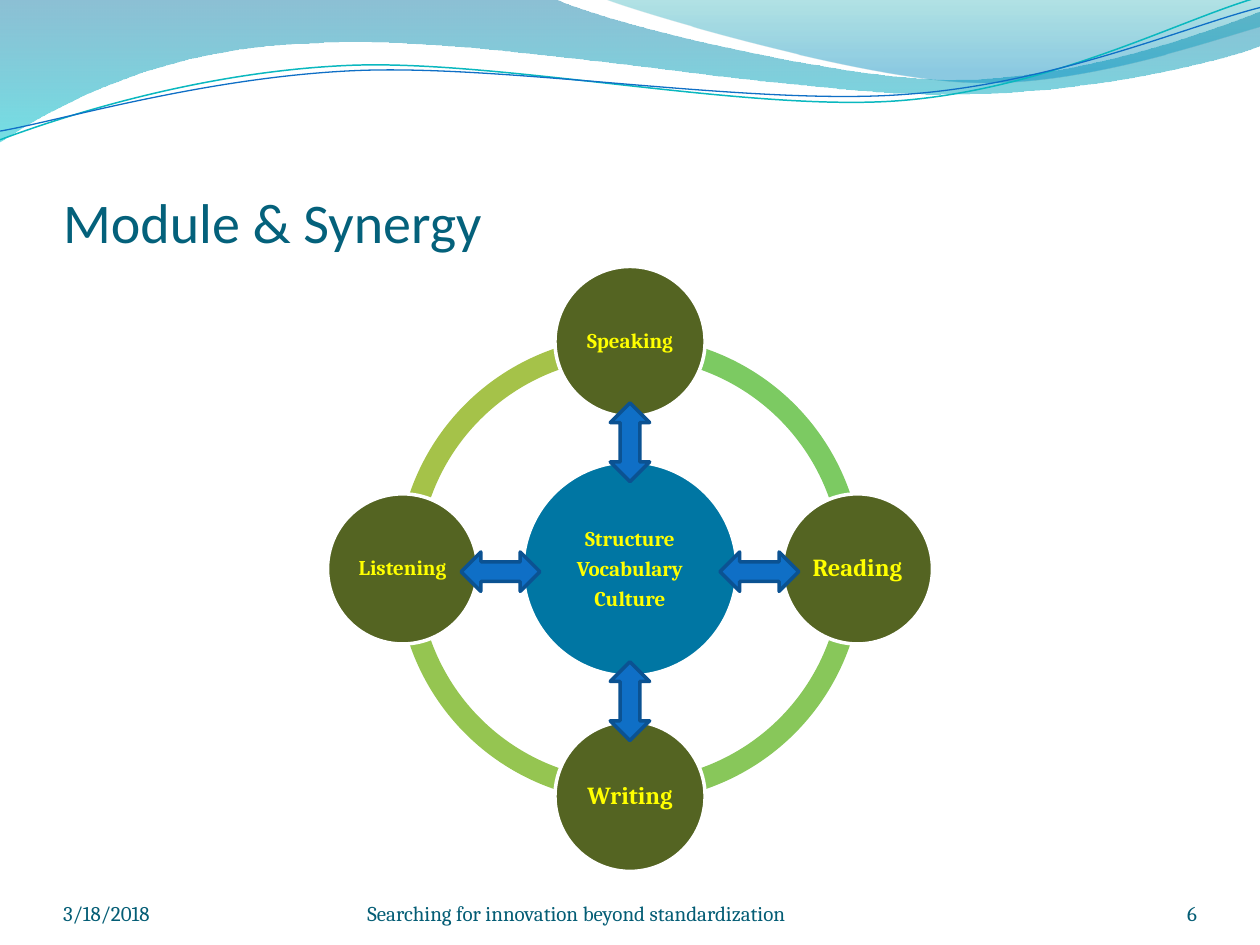
from lxml.etree import SubElement
from pptx import Presentation
from pptx.dml.color import RGBColor
from pptx.enum.shapes import MSO_SHAPE
from pptx.enum.text import MSO_ANCHOR, MSO_AUTO_SIZE, PP_ALIGN
from pptx.oxml.ns import qn
from pptx.util import Pt

WHITE = RGBColor(0xFF, 0xFF, 0xFF)
YELLOW = RGBColor(0xFF, 0xFF, 0x00)
TITLE = RGBColor(0x04, 0x61, 0x7B)
FOOT = RGBColor(0x04, 0x5D, 0x75)
CORE = RGBColor(0x00, 0x76, 0xA3)
NODE = RGBColor(0x54, 0x64, 0x22)
BLUE = RGBColor(0x0F, 0x6F, 0xC6)
NAVY = RGBColor(0x0B, 0x52, 0x92)
TEAL = RGBColor(0x0A, 0xB8, 0xBF)
ARCS = [RGBColor(0x88, 0xC7, 0x5A), RGBColor(0x95, 0xC5, 0x51),
        RGBColor(0xA5, 0xC2, 0x49), RGBColor(0x7C, 0xCA, 0x62)]
DEEP = [(0, RGBColor(0x00, 0x74, 0xA1), 45), (1, RGBColor(0x00, 0xC6, 0xCF), 55)]
PALE = [(0, RGBColor(0x00, 0xA1, 0xA9), 30), (0.8, RGBColor(0x00, 0x8B, 0xBF), 45)]

BAND = [(-0.7, 0), (316.8, -0.7),
        (342.7, 12.2, 478.1, 45.4, 545.8, 45.4),
        (614.2, 45.4, 689.8, 18.7, 720, 6.5), (720.7, 25.9),
        (707.8, 31.7, 626.4, 54.7, 537.1, 54),
        (447.8, 54, 275, 20.2, 185, 24.5),
        (92.9, 25.9, 33.1, 59.8, -0.7, 81.4)]
CREST = [(344.9, -0.7),
         (366.5, 7.9, 491, 44.6, 553.7, 46.8),
         (616.3, 49.7, 691.9, 23, 720, 15.1), (720, 0)]
UPPER = [(0, 79.9),
         (34.6, 67, 113.8, 41, 199.4, 37.4),
         (284.4, 33.8, 427, 64.1, 513.4, 57.6),
         (599.8, 51.1, 675.4, 10.8, 718.6, -1.4)]
LOWER = [(0, 74.9),
         (33.8, 69.1, 118.1, 43.9, 203.8, 40.3),
         (290.2, 36.7, 429.8, 60.5, 516.2, 54),
         (601.9, 48.2, 677.5, 15.1, 720, 4.3)]


def bend(shape, segs):
    track = next(shape._element.iter(qn("a:path")))
    marks = iter(track.findall(qn("a:lnTo")))
    for seg in segs[1:]:
        head = next(marks)
        if len(seg) == 6:
            head.tag = qn("a:cubicBezTo")
            for _ in range(2):
                mark = next(marks)
                head.append(mark[0])
                track.remove(mark)


def draw(slide, box, segs, close):
    left, top = box[:2]
    dots = [(Pt(left + x), Pt(top + y))
            for seg in segs for x, y in zip(seg[::2], seg[1::2])]
    pen = slide.shapes.build_freeform(*dots[0], scale=1)
    pen.add_line_segments(dots[1:], close=close)
    shape = pen.convert_to_shape()
    shape.shadow.inherit = False
    bend(shape, segs)
    return shape


def add_waves(slide, box):
    for segs, stops in ((BAND, DEEP), (CREST, PALE)):
        wave = draw(slide, box, segs, True)
        wave.line.fill.background()
        wave.fill.gradient()
        wave.fill.gradient_angle = 270
        for stop, (pos, color, _) in zip(wave.fill.gradient_stops, stops):
            stop.position = pos
            stop.color.rgb = color
        tints = wave._element.spPr.iter(qn("a:srgbClr"))
        for tint, (_, _, alpha) in zip(tints, stops):
            SubElement(tint, qn("a:alpha")).set("val", str(alpha * 1000))
    for segs, color, width in ((UPPER, TEAL, 0.85), (LOWER, BLUE, 0.75)):
        curve = draw(slide, box, segs, False)
        curve.fill.background()
        curve.line.color.rgb = color
        curve.line.width = Pt(width)


def put(shape, box):
    shape.left, shape.top, shape.width, shape.height = map(Pt, box)


def write(frame, lines, size, color, font="Cambria", bold=False, gap=None,
          align=PP_ALIGN.LEFT, anchor=MSO_ANCHOR.BOTTOM, pad=(0, 0, 0, 0)):
    frame.word_wrap = True
    frame.auto_size = MSO_AUTO_SIZE.NONE
    frame.vertical_anchor = anchor
    (frame.margin_left, frame.margin_top,
     frame.margin_right, frame.margin_bottom) = map(Pt, pad)
    for i, line in enumerate(lines):
        para = frame.add_paragraph() if i else frame.paragraphs[0]
        para.alignment = align
        if gap is not None:
            para.line_spacing = 0.9
            para.space_after = Pt(gap if i < len(lines) - 1 else 0)
        run = para.add_run()
        run.text = line
        run.font.name = font
        run.font.size = Pt(size)
        run.font.bold = bold
        run.font.color.rgb = color


def add_title(slide, box):
    title = slide.shapes.title
    put(title, box)
    write(title.text_frame, ["Module & Synergy"], 32, TITLE, "Calibri",
          pad=(0, 3.6, 0, 0))


def add_form(slide, kind, mid, size, fill, line=None):
    x, y = mid
    wide, high = size
    shape = slide.shapes.add_shape(
        kind, Pt(x - wide / 2), Pt(y - high / 2), Pt(wide), Pt(high))
    shape.shadow.inherit = False
    shape.fill.solid()
    shape.fill.fore_color.rgb = fill
    if line is None:
        shape.line.fill.background()
    else:
        shape.line.color.rgb = line
        shape.line.width = Pt(2)
    return shape


def add_disc(slide, mid, size, fill, lines, points, drop=1.5):
    disc = add_form(slide, MSO_SHAPE.OVAL, mid, (size, size), fill, WHITE)
    write(disc.text_frame, lines, points, YELLOW, bold=True, gap=4.2,
          align=PP_ALIGN.CENTER, anchor=MSO_ANCHOR.MIDDLE,
          pad=(1.5, drop, 1.5, 1.5))


def add_cycle(slide, box):
    left, top, size, _ = box
    x, y = left + size / 2, top + size / 2
    ring, orbit, reach = size * 0.77, size * 0.376, size * 0.214
    quarter = 54
    for i in (2, 1, 0, 3):
        arc = add_form(slide, MSO_SHAPE.BLOCK_ARC, (x, y), (ring, ring), ARCS[i])
        for k, value in enumerate((i * quarter, (i + 1) % 4 * quarter, 0.046)):
            arc.adjustments[k] = value
    add_disc(slide, (x, y), 122.4, CORE,
             ["Structure", "Vocabulary", "Culture"], 12, 2.7)
    nodes = [("Speaking", 12, 0, -1), ("Reading", 14, 1, 0),
             ("Writing", 14, 0, 1), ("Listening", 12, -1, 0)]
    for name, points, dx, dy in nodes:
        add_disc(slide, (x + dx * orbit, y + dy * orbit), 85.8, NODE, [name], points)
    for _, _, dx, dy in nodes:
        kind = MSO_SHAPE.LEFT_RIGHT_ARROW if dx else MSO_SHAPE.UP_DOWN_ARROW
        area = (45, 22.5) if dx else (22.5, 45)
        add_form(slide, kind, (x + dx * reach, y + 1.6 + dy * reach), area, BLUE, NAVY)


def add_foot(slide, box):
    left, top, width, height = box
    parts = [("3/18/2018", 0, 168, PP_ALIGN.LEFT),
             ("Searching for innovation beyond standardization", 174, 264, PP_ALIGN.LEFT),
             ("6", width - 60, 60, PP_ALIGN.RIGHT)]
    for text, shift, wide, align in parts:
        note = slide.shapes.add_textbox(
            Pt(left + shift), Pt(top), Pt(wide), Pt(height))
        write(note.text_frame, [text], 12, FOOT, align=align)


def main():
    deck = Presentation()
    deck.slide_width, deck.slide_height = Pt(720), Pt(540)
    slide = deck.slides.add_slide(deck.slide_layouts[5])
    add_waves(slide, (0, 0, 720, 82))
    add_title(slide, (36, 55.5, 648, 90))
    add_cycle(slide, (187.2, 152.3, 345.6, 345.6))
    add_foot(slide, (36, 500, 648, 28.8))
    deck.save("out.pptx")


if __name__ == "__main__":
    main()
